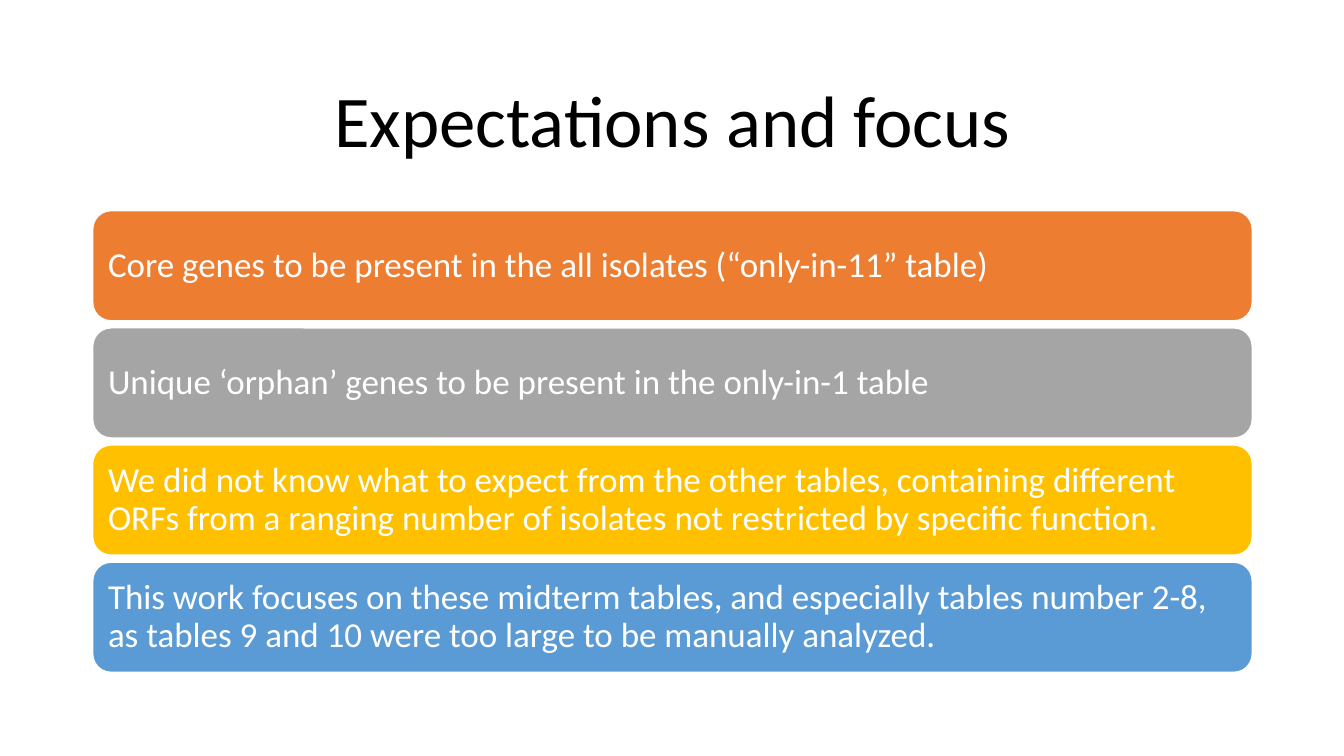
from dataclasses import dataclass

from pptx import Presentation
from pptx.dml.color import RGBColor
from pptx.enum.shapes import MSO_SHAPE
from pptx.enum.text import MSO_ANCHOR, PP_ALIGN
from pptx.util import Inches, Pt


@dataclass(frozen=True)
class Theme:
    """Colours, font and type sizes of the slide."""
    font: str = "Calibri"
    title_size: int = 52
    card_size: int = 25
    title_colour: str = "000000"
    light: str = "FFFFFF"
    cards: tuple = ("ED7D31", "A5A5A5", "FFC000", "5B9BD5")


@dataclass(frozen=True)
class Box:
    """A region of the slide, in inches."""
    left: float
    top: float
    width: float
    height: float

    def lengths(self):
        """Return left, top, width and height as slide lengths."""
        return [Inches(n) for n in (self.left, self.top, self.width, self.height)]


THEME = Theme()
TITLE_BOX = Box(0.92, 0.61, 11.5, 1.24)
CARDS_BOX = Box(0.92, 2.09, 11.5, 4.58)
CARD_GAP = 0.07
EXPECTATIONS = (
    "Core genes to be present in the all isolates (“only-in-11” table)",
    "Unique ‘orphan’ genes to be present in the only-in-1 table",
    "We did not know what to expect from the other tables, containing different "
    "ORFs from a ranging number of isolates not restricted by specific function.",
    "This work focuses on these midterm tables, and especially tables number 2-8, "
    "as tables 9 and 10 were too large to be manually analyzed.",
)


def write_text(shape, text, size, colour, alignment):
    """Write one vertically centred paragraph into a shape."""
    frame = shape.text_frame
    frame.text = text
    frame.word_wrap = True
    frame.vertical_anchor = MSO_ANCHOR.MIDDLE
    para = frame.paragraphs[0]
    para.alignment = alignment
    para.line_spacing = 0.9
    font = para.runs[0].font
    font.name = THEME.font
    font.size = Pt(size)
    font.color.rgb = RGBColor.from_string(colour)


def add_title(page, box, text):
    """Place the title placeholder in its box and fill it."""
    title = page.shapes.title
    title.left, title.top, title.width, title.height = box.lengths()
    write_text(title, text, THEME.title_size, THEME.title_colour, PP_ALIGN.CENTER)


def add_card(page, box, text, colour):
    """Draw one rounded card with left-aligned text."""
    card = page.shapes.add_shape(MSO_SHAPE.ROUNDED_RECTANGLE, *box.lengths())
    card.shadow.inherit = False
    card.fill.solid()
    card.fill.fore_color.rgb = RGBColor.from_string(colour)
    card.line.color.rgb = RGBColor.from_string(THEME.light)
    card.line.width = Pt(1)
    frame = card.text_frame
    frame.margin_left = frame.margin_right = Inches(0.1)
    frame.margin_top = frame.margin_bottom = Inches(0.1)
    write_text(card, text, THEME.card_size, THEME.light, PP_ALIGN.LEFT)


def add_cards(page, box, texts):
    """Stack equal cards with equal gaps to fill the box."""
    pitch = (box.height + CARD_GAP) / len(texts)
    for index, (text, colour) in enumerate(zip(texts, THEME.cards)):
        card_box = Box(box.left, box.top + index * pitch, box.width, pitch - CARD_GAP)
        add_card(page, card_box, text, colour)


def main():
    """Build the deck and save it."""
    deck = Presentation()
    deck.slide_width, deck.slide_height = Inches(13.33), Inches(7.5)
    page = deck.slides.add_slide(deck.slide_layouts.get_by_name("Title Only"))
    add_title(page, TITLE_BOX, "Expectations and focus")
    add_cards(page, CARDS_BOX, EXPECTATIONS)
    deck.save("out.pptx")


if __name__ == "__main__":
    main()
